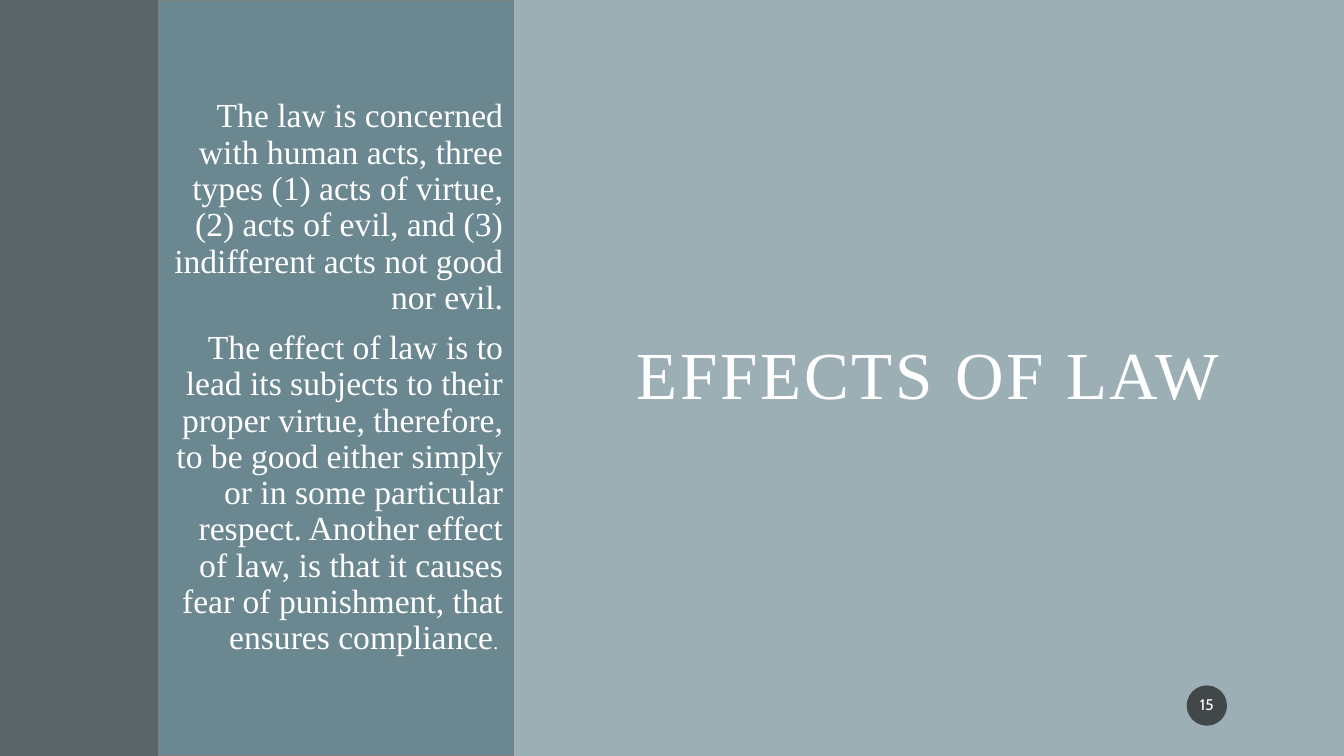
from dataclasses import dataclass
from typing import Optional

from lxml.etree import SubElement
from pptx import Presentation
from pptx.dml.color import RGBColor
from pptx.enum.shapes import MSO_SHAPE
from pptx.enum.text import MSO_ANCHOR, MSO_AUTO_SIZE, PP_ALIGN
from pptx.oxml.ns import qn
from pptx.util import Inches, Pt

BACKGROUND = RGBColor(0x9B, 0xAF, 0xB5)
SLATE = RGBColor(0x4A, 0x53, 0x56)
TEAL = RGBColor(0x6B, 0x88, 0x91)
GREY = RGBColor(0x80, 0x80, 0x80)
NEAR_BLACK = RGBColor(0x1D, 0x1D, 0x1D)
WHITE = RGBColor(0xFF, 0xFF, 0xFF)
SERIF = "Times New Roman"


@dataclass
class Box:
    left: float
    top: float
    width: float
    height: float


@dataclass
class Panel:
    box: Box
    color: RGBColor
    opacity: Optional[int] = None
    outline: MSO_SHAPE = MSO_SHAPE.RECTANGLE


@dataclass
class Words:
    text: str
    size: float
    font: str = SERIF


BODY_BOX = Box(1.57, 0, 3.52, 7.5)
SIDE_PANELS = [
    Panel(Box(0, 0, 1.57, 7.5), SLATE, 80),
    Panel(BODY_BOX, TEAL),
]
NUMBER_BADGE = Panel(Box(11.77, 6.8, 0.4, 0.4), NEAR_BLACK, 70, MSO_SHAPE.OVAL)
EFFECTS = [
    [Words("The law is concerned with human acts, three types (1) acts of virtue, "
           "(2) acts of evil, and (3) indifferent acts not good nor evil.", 24)],
    [Words("The effect of law is to lead its subjects to their proper virtue, "
           "therefore, to be good either simply or in some particular respect. "
           "Another effect of law, is that it causes fear of punishment, "
           "that ensures compliance", 24),
     Words(". ", 14)],
]


def place(shape, box: Box) -> None:
    shape.left, shape.top = Inches(box.left), Inches(box.top)
    shape.width, shape.height = Inches(box.width), Inches(box.height)


def draw_panel(slide, panel: Panel):
    box = panel.box
    shape = slide.shapes.add_shape(
        panel.outline, Inches(box.left), Inches(box.top),
        Inches(box.width), Inches(box.height))
    shape.shadow.inherit = False
    shape.line.fill.background()
    shape.fill.solid()
    shape.fill.fore_color.rgb = panel.color
    if panel.opacity is not None:
        color = shape.fill._xPr.find(qn("a:solidFill"))[0]
        SubElement(color, qn("a:alpha"), val=str(panel.opacity * 1000))
    return shape


def prepare_frame(shape, side: float, end: float):
    frame = shape.text_frame
    frame.word_wrap = True
    frame.auto_size = MSO_AUTO_SIZE.NONE
    frame.vertical_anchor = MSO_ANCHOR.MIDDLE
    frame.margin_left = frame.margin_right = Inches(side)
    frame.margin_top = frame.margin_bottom = Inches(end)
    return frame


def write(paragraph, pieces: list[Words], alignment: PP_ALIGN,
          before: float = 0, after: float = 0) -> None:
    paragraph.alignment = alignment
    paragraph.line_spacing = 0.9
    paragraph.space_before = Pt(before)
    paragraph.space_after = Pt(after)
    for words in pieces:
        run = paragraph.add_run()
        run.text = words.text
        run.font.size = Pt(words.size)
        run.font.name = words.font
        run.font.color.rgb = WHITE


def main() -> None:
    deck = Presentation()
    deck.slide_width, deck.slide_height = Inches(13.33), Inches(7.5)
    slide = deck.slides.add_slide(deck.slide_layouts[0])
    slide.background.fill.solid()
    slide.background.fill.fore_color.rgb = BACKGROUND

    title = slide.shapes.title
    place(title, Box(6.01, 1.08, 6.44, 5.34))
    heading = prepare_frame(title, 0.3, 0.2).paragraphs[0]
    write(heading, [Words("EFFECTS OF LAW", 48)], PP_ALIGN.LEFT)
    heading.runs[0].font._element.set("spc", "200")

    body = slide.placeholders[1]
    place(body, BODY_BOX)
    body.line.color.rgb = GREY
    body.line.width = Pt(0.75)
    frame = prepare_frame(body, 0.1, 0.05)
    for index, pieces in enumerate(EFFECTS):
        paragraph = frame.add_paragraph() if index else frame.paragraphs[0]
        write(paragraph, pieces, PP_ALIGN.RIGHT, before=10 if index else 0)

    for panel in SIDE_PANELS:
        shape = draw_panel(slide, panel)
        body._element.addprevious(shape._element)

    badge = draw_panel(slide, NUMBER_BADGE)
    number = prepare_frame(badge, 0.02, 0.05).paragraphs[0]
    write(number, [Words("15", 11, "Cabin")], PP_ALIGN.CENTER, after=6)

    deck.save("out.pptx")


if __name__ == "__main__":
    main()
